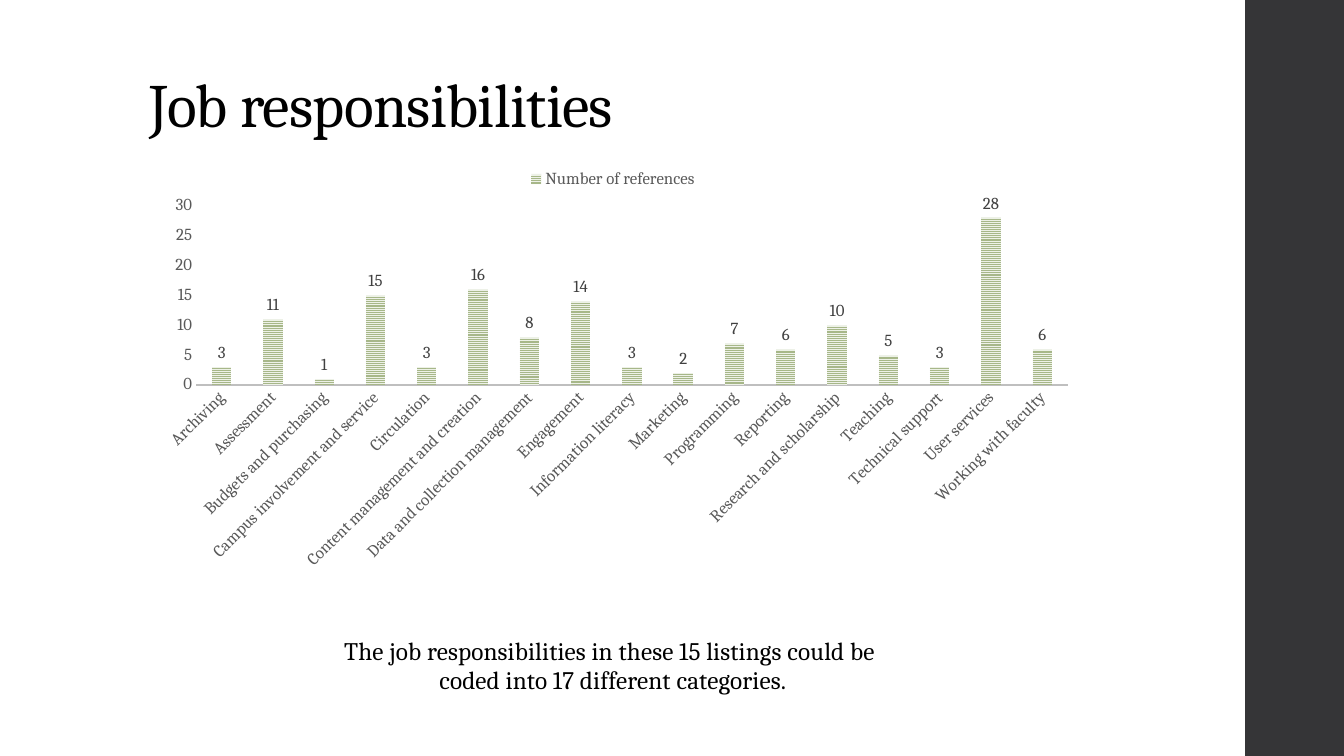
from lxml import etree
from pptx import Presentation
from pptx.chart.data import CategoryChartData
from pptx.dml.color import RGBColor
from pptx.enum.chart import XL_CHART_TYPE, XL_LABEL_POSITION, XL_LEGEND_POSITION, XL_TICK_MARK
from pptx.enum.dml import MSO_PATTERN
from pptx.enum.shapes import MSO_SHAPE
from pptx.enum.text import MSO_ANCHOR, PP_ALIGN
from pptx.oxml.ns import qn
from pptx.util import Inches, Pt

COLUMNS = XL_CHART_TYPE.COLUMN_CLUSTERED
LABEL_OUTSIDE = XL_LABEL_POSITION.OUTSIDE_END
LEGEND_TOP = XL_LEGEND_POSITION.TOP
NO_TICKS = XL_TICK_MARK.NONE
STRIPES = MSO_PATTERN.NARROW_HORIZONTAL
RECTANGLE = MSO_SHAPE.RECTANGLE
TOP, BOTTOM = MSO_ANCHOR.TOP, MSO_ANCHOR.BOTTOM
LEFT, CENTER = PP_ALIGN.LEFT, PP_ALIGN.CENTER

BLACK = RGBColor(0x00, 0x00, 0x00)
CHARCOAL = RGBColor(0x35, 0x35, 0x37)
LABEL_GRAY = RGBColor(0x40, 0x40, 0x40)
AXIS_GRAY = RGBColor(0x59, 0x59, 0x59)
LINE_GRAY = RGBColor(0xBF, 0xBF, 0xBF)
SAGE = RGBColor(0xA7, 0xB7, 0x89)
PALE_SAGE = RGBColor(0xED, 0xF1, 0xE7)

REFERENCES = {
    "Archiving": 3,
    "Assessment": 11,
    "Budgets and purchasing": 1,
    "Campus involvement and service": 15,
    "Circulation": 3,
    "Content management and creation": 16,
    "Data and collection management": 8,
    "Engagement": 14,
    "Information literacy": 3,
    "Marketing": 2,
    "Programming": 7,
    "Reporting": 6,
    "Research and scholarship": 10,
    "Teaching": 5,
    "Technical support": 3,
    "User services": 28,
    "Working with faculty": 6,
}


class SlideBuilder:
    typeface = "Cambria"

    def __init__(self, slide):
        self.shapes = slide.shapes

    def style_font(self, font, size, color):
        font.name = self.typeface
        font.size = Pt(size)
        font.color.rgb = color

    def band(self, left, top, width, height, color):
        band = self.shapes.add_shape(
            RECTANGLE, Inches(left), Inches(top), Inches(width), Inches(height))
        band.shadow.inherit = False
        band.fill.solid()
        band.fill.fore_color.rgb = color
        band.line.fill.background()

    def text(self, content, left, top, width, height, *, size, color=BLACK, anchor=TOP,
             align=LEFT, line_spacing=1.0, before=0, after=0, tracking=0):
        frame = self.shapes.add_textbox(
            Inches(left), Inches(top), Inches(width), Inches(height)).text_frame
        frame.word_wrap = True
        frame.vertical_anchor = anchor
        paragraph = frame.paragraphs[0]
        paragraph.alignment = align
        paragraph.line_spacing = line_spacing
        paragraph.space_before = Pt(before)
        paragraph.space_after = Pt(after)
        for number, line in enumerate(content.split("\n")):
            if number:
                paragraph.add_line_break()
            run = paragraph.add_run()
            run.text = line
            self.style_font(run.font, size, color)
            run.font._element.set("spc", str(round(tracking * 100)))

    def column_chart(self, series_name, values, left, top, width, height, plot_area):
        data = CategoryChartData()
        data.categories = list(values)
        data.add_series(series_name, list(values.values()))
        chart = self.shapes.add_chart(
            COLUMNS, Inches(left), Inches(top), Inches(width), Inches(height), data).chart
        self.style_font(chart.font, 10, BLACK)
        chart.has_title = False
        chart.has_legend = True
        chart.legend.position = LEGEND_TOP
        chart.legend.include_in_layout = False
        self.style_font(chart.legend.font, 12, AXIS_GRAY)
        self.style_columns(chart.plots[0])
        self.style_axes(chart.category_axis, chart.value_axis)
        self.place_plot(chart, plot_area)

    def style_columns(self, plot):
        plot.gap_width = 164
        plot.overlap = -22
        plot.vary_by_categories = False
        columns = plot.series[0]
        columns.invert_if_negative = False
        fill = columns.format.fill
        fill.patterned()
        fill.pattern = STRIPES
        fill.fore_color.rgb = SAGE
        fill.back_color.rgb = PALE_SAGE
        columns.format.line.fill.background()
        labels = columns.data_labels
        labels.show_value = True
        labels.position = LABEL_OUTSIDE
        self.style_font(labels.font, 12, LABEL_GRAY)

    def style_axes(self, categories, counts):
        for axis in (categories, counts):
            axis.major_tick_mark = NO_TICKS
            axis.minor_tick_mark = NO_TICKS
            axis.has_major_gridlines = False
            self.style_font(axis.tick_labels.font, 12, AXIS_GRAY)
        categories.format.line.color.rgb = LINE_GRAY
        categories.format.line.width = Pt(1.5)
        categories._element.find(qn("c:txPr")).find(qn("a:bodyPr")).set("rot", "-2700000")
        counts.format.line.fill.background()
        counts.minimum_scale = 0
        counts.maximum_scale = 30
        counts.major_unit = 5

    def place_plot(self, chart, fractions):
        area = chart._chartSpace.find(".//" + qn("c:plotArea"))
        for automatic in area.findall(qn("c:layout")):
            area.remove(automatic)
        layout = etree.Element(qn("c:layout"))
        manual = etree.SubElement(layout, qn("c:manualLayout"))
        settings = {"layoutTarget": "inner", "xMode": "edge", "yMode": "edge"}
        settings.update(zip("xywh", fractions))
        for tag, value in settings.items():
            etree.SubElement(manual, qn("c:" + tag)).set("val", str(value))
        area.insert(0, layout)


def main():
    deck = Presentation()
    deck.slide_width = Inches(13.33)
    deck.slide_height = Inches(7.5)
    builder = SlideBuilder(deck.slides.add_slide(deck.slide_layouts[6]))
    builder.band(12.35, 0, 0.98, 7.5, CHARCOAL)
    builder.text("Job responsibilities", 1.38, 0.62, 10.6, 0.83, size=44,
                 anchor=BOTTOM, line_spacing=0.9, tracking=-0.5)
    builder.column_chart("Number of references", REFERENCES, 1.38, 1.57, 9.4, 4.68,
                         plot_area=(0.06, 0.1, 0.92, 0.38))
    builder.text("The job responsibilities in these 15 listings could be \n"
                 "coded into 17 different categories.",
                 1.38, 6.28, 9.4, 0.7, size=18, align=CENTER,
                 line_spacing=0.95, before=14, after=2, tracking=0.1)
    deck.save("out.pptx")


if __name__ == "__main__":
    main()
